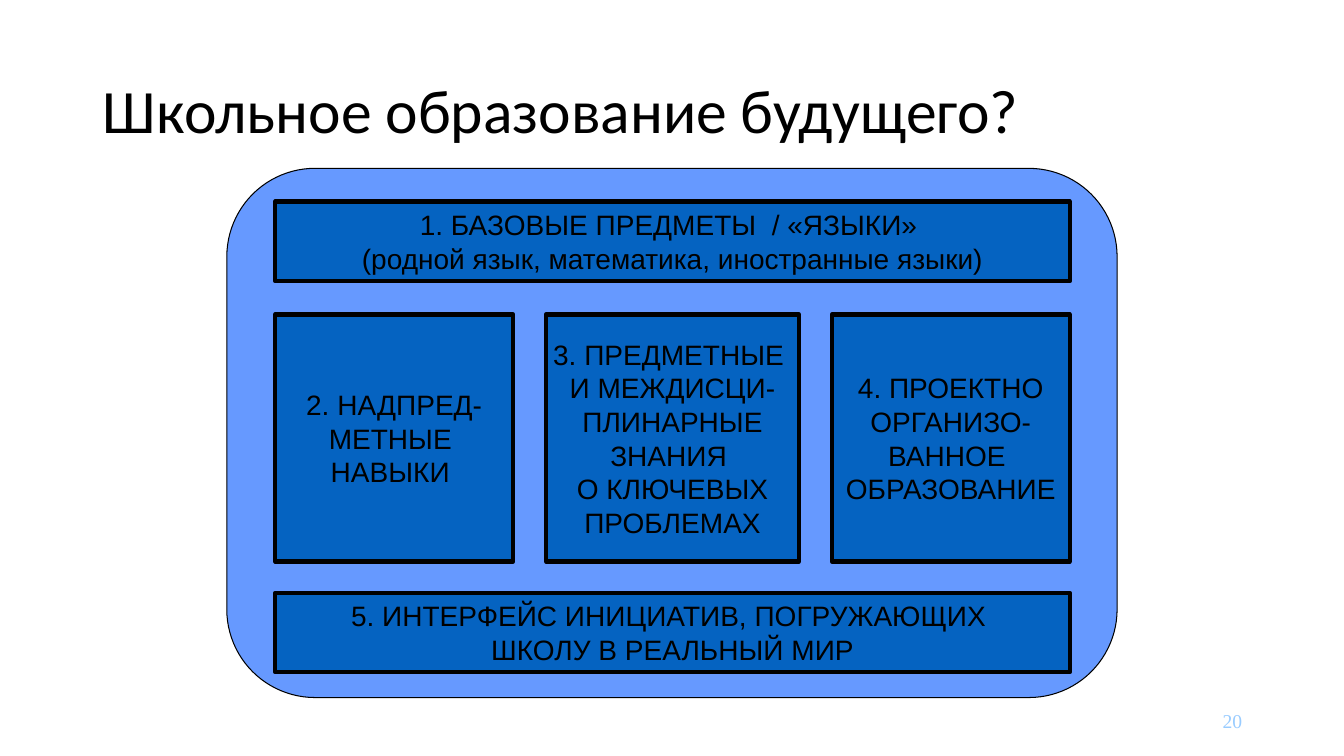
from pptx import Presentation
from pptx.dml.color import RGBColor
from pptx.enum.shapes import MSO_SHAPE
from pptx.enum.text import MSO_ANCHOR, PP_ALIGN
from pptx.util import Inches, Pt

RECTANGLE = MSO_SHAPE.RECTANGLE
ROUNDED = MSO_SHAPE.ROUNDED_RECTANGLE
MIDDLE = MSO_ANCHOR.MIDDLE
LEFT, CENTER, RIGHT = PP_ALIGN.LEFT, PP_ALIGN.CENTER, PP_ALIGN.RIGHT

BLACK = RGBColor(0x00, 0x00, 0x00)
PANEL_BLUE = RGBColor(0x66, 0x99, 0xFF)
BLOCK_BLUE = RGBColor(0x05, 0x63, 0xC1)
NUMBER_BLUE = RGBColor(0x99, 0xCC, 0xFF)

TITLE_ONLY = 5


class SlideBuilder:
    """Holds the style and the current slide."""

    title_font = "Calibri"
    block_font = "Arial"
    number_font = "Times New Roman"

    def __init__(self, deck):
        self.page = deck.slides.add_slide(deck.slide_layouts[TITLE_ONLY])

    def set_text(self, shape, text, font, size, color, align):
        frame = shape.text_frame
        frame.text = text
        frame.vertical_anchor = MIDDLE
        para = frame.paragraphs[0]
        para.alignment = align
        for span in para.runs:
            span.font.name = font
            span.font.size = Pt(size)
            span.font.color.rgb = color
        return frame

    def title(self, text, left, top, width, height):
        box = self.page.shapes.title
        box.left, box.top = Inches(left), Inches(top)
        box.width, box.height = Inches(width), Inches(height)
        frame = self.set_text(box, text, self.title_font, 44, BLACK, LEFT)
        frame.word_wrap = True
        frame.paragraphs[0].line_spacing = 0.9

    def shape(self, kind, left, top, width, height, fill, line_width):
        shape = self.page.shapes.add_shape(
            kind, Inches(left), Inches(top), Inches(width), Inches(height))
        shape.shadow.inherit = False
        shape.fill.solid()
        shape.fill.fore_color.rgb = fill
        shape.line.color.rgb = BLACK
        shape.line.width = Pt(line_width)
        return shape

    def panel(self, left, top, width, height):
        self.shape(ROUNDED, left, top, width, height, PANEL_BLUE, 0.75)

    def block(self, lines, left, top, width, height):
        block = self.shape(RECTANGLE, left, top, width, height, BLOCK_BLUE, 3)
        frame = self.set_text(block, "\v".join(lines), self.block_font, 20, BLACK, CENTER)
        frame.word_wrap = False

    def page_number(self, text, left, top, width, height):
        box = self.page.shapes.add_textbox(
            Inches(left), Inches(top), Inches(width), Inches(height))
        frame = self.set_text(box, text, self.number_font, 14, NUMBER_BLUE, RIGHT)
        frame.word_wrap = True


def main():
    deck = Presentation()
    deck.slide_width, deck.slide_height = Inches(13.33), Inches(7.5)
    slide = SlideBuilder(deck)

    # Title, page number and background panel
    slide.title("Школьное образование будущего?", 0.92, 0.4, 11.5, 1.45)
    slide.page_number("20", 9.42, 6.95, 3, 0.4)
    slide.panel(2.25, 1.67, 8.83, 5.25)

    # Wide blocks above and below
    left, full_width = 2.73, 7.88
    wide_blocks = [
        (2, ["1. БАЗОВЫЕ ПРЕДМЕТЫ  / «ЯЗЫКИ» ",
             "(родной язык, математика, иностранные языки)"]),
        (5.88, ["5. ИНТЕРФЕЙС ИНИЦИАТИВ, ПОГРУЖАЮЩИХ ",
                "ШКОЛУ В РЕАЛЬНЫЙ МИР"]),
    ]
    for top, lines in wide_blocks:
        slide.block(lines, left, top, full_width, 0.79)

    # Three middle blocks with equal gaps
    middle_blocks = [
        (2.36, ["2. НАДПРЕД-", "МЕТНЫЕ ", "НАВЫКИ "]),
        (2.51, ["3. ПРЕДМЕТНЫЕ ", "И МЕЖДИСЦИ-", "ПЛИНАРНЫЕ",
                "ЗНАНИЯ ", "О КЛЮЧЕВЫХ", "ПРОБЛЕМАХ"]),
        (2.36, ["4. ПРОЕКТНО", "ОРГАНИЗО-", "ВАННОЕ ", "ОБРАЗОВАНИЕ"]),
    ]
    used_width = sum(width for width, lines in middle_blocks)
    gap = (full_width - used_width) / (len(middle_blocks) - 1)
    for width, lines in middle_blocks:
        slide.block(lines, left, 3.12, width, 2.45)
        left += width + gap

    deck.save("out.pptx")


if __name__ == "__main__":
    main()
